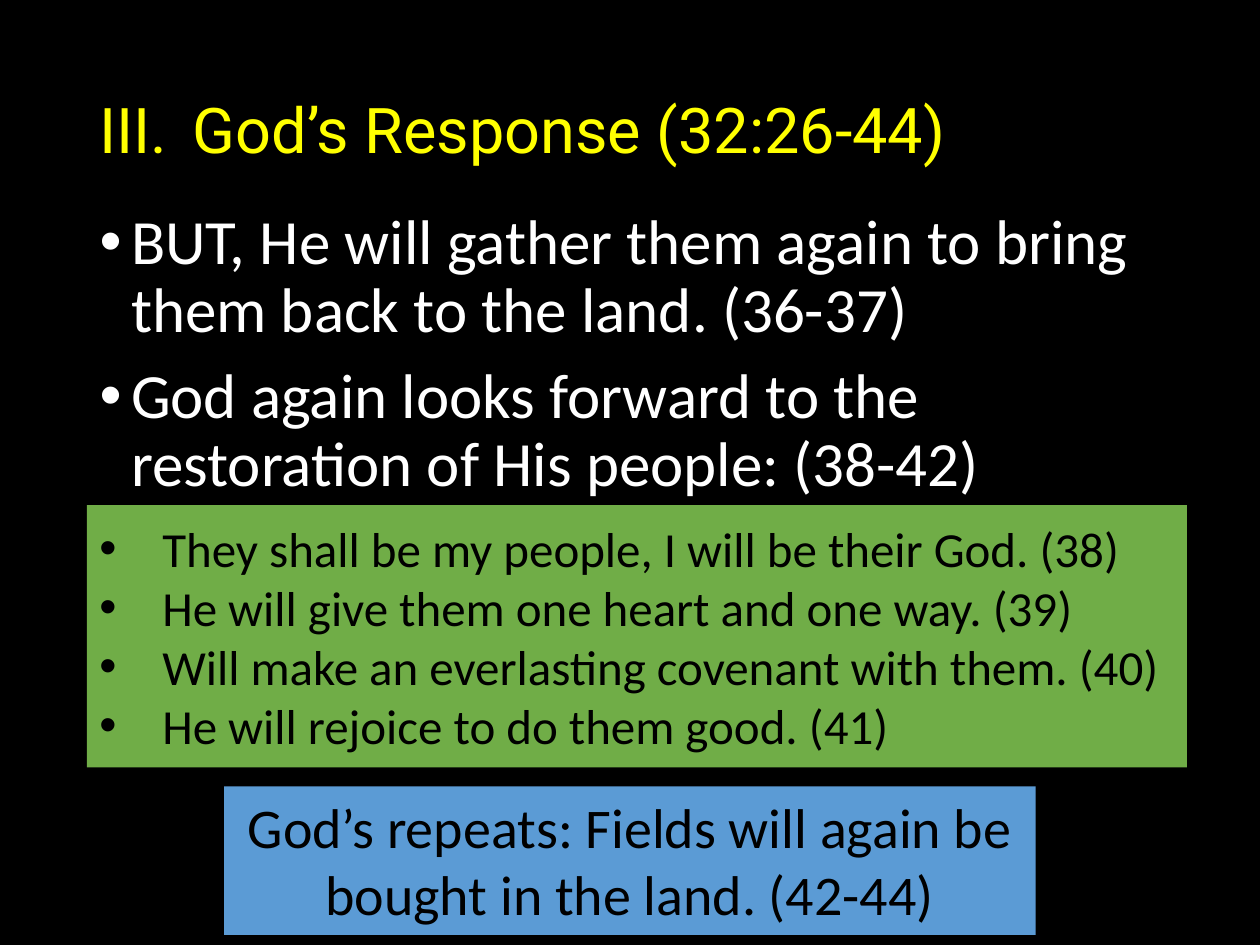
from lxml import etree
from pptx import Presentation
from pptx.dml.color import RGBColor
from pptx.enum.shapes import MSO_SHAPE
from pptx.enum.text import MSO_ANCHOR, MSO_AUTO_SIZE, PP_ALIGN
from pptx.oxml.ns import qn
from pptx.util import Inches, Pt

RECT = MSO_SHAPE.RECTANGLE
TOP, MIDDLE = MSO_ANCHOR.TOP, MSO_ANCHOR.MIDDLE
LEFT, CENTER = PP_ALIGN.LEFT, PP_ALIGN.CENTER
NO_FIT = MSO_AUTO_SIZE.NONE

BLACK = RGBColor(0x00, 0x00, 0x00)
WHITE = RGBColor(0xFF, 0xFF, 0xFF)
YELLOW = RGBColor(0xFF, 0xFF, 0x00)
GREEN = RGBColor(0x70, 0xAD, 0x47)
BLUE = RGBColor(0x5B, 0x9B, 0xD5)

# Content
TITLE = ["God’s Response (32:26-44)"]
POINTS = [
    "BUT, He will gather them again to bring them back to the land. (36-37)",
    "God again looks forward to the restoration of His people: (38-42)",
]
PROMISES = [
    "They shall be my people, I will be their God. (38)",
    "He will give them one heart and one way. (39)",
    "Will make an everlasting covenant with them. (40)",
    "He will rejoice to do them good. (41)",
]
CONCLUSION = ["God’s repeats: Fields will again be bought in the land. (42-44)"]

# Formats
BULLET = ("a:buChar", {"char": "•"})
ROMAN_III = ("a:buAutoNum", {"type": "romanUcPeriod", "startAt": "3"})
TITLE_FONT = {"name": "Roboto", "size": Pt(36)}
POINT_FONT = {"name": "Calibri", "size": Pt(36)}
PROMISE_FONT = {"name": "Calibri", "size": Pt(28)}
CONCLUSION_FONT = {"name": "Calibri", "size": Pt(32)}
PLAIN = {"alignment": LEFT, "space_before": Pt(0)}
SPACED = {"alignment": LEFT, "space_before": Pt(10), "line_spacing": 0.9}
CENTERED = {"alignment": CENTER}


def place(sp, left, top, width, height):
    sp.left, sp.top = Inches(left), Inches(top)
    sp.width, sp.height = Inches(width), Inches(height)


def set_marker(p, marker, margin, hanging):
    tag, attrs = marker
    pPr = p._p.get_or_add_pPr()
    pPr.set("marL", str(Inches(margin)))
    pPr.set("indent", str(-Inches(hanging)))
    if tag == "a:buChar":
        etree.SubElement(pPr, qn("a:buFont"), {"typeface": "Arial"})
    etree.SubElement(pPr, qn(tag), attrs)


def write(sp, lines, font, color, para, anchor, marker=None):
    tf = sp.text_frame
    tf.word_wrap, tf.auto_size, tf.vertical_anchor = True, NO_FIT, anchor
    for i, line in enumerate(lines):
        p = tf.add_paragraph() if i else tf.paragraphs[0]
        for name, value in para.items():
            setattr(p, name, value)
        if marker:
            set_marker(p, *marker)
        r = p.add_run()
        r.text = line
        for name, value in font.items():
            setattr(r.font, name, value)
        r.font.color.rgb = color


def add_box(s, fill, *box):
    sp = s.shapes.add_shape(RECT, *(Inches(v) for v in box))
    sp.shadow.inherit = False
    sp.fill.solid()
    sp.fill.fore_color.rgb = fill
    sp.line.fill.background()
    return sp


# Slide
prs = Presentation()
prs.slide_width, prs.slide_height = Inches(10), Inches(7.5)
s = prs.slides.add_slide(prs.slide_layouts[1])
s.background.fill.solid()
s.background.fill.fore_color.rgb = BLACK

# Title and main points
title, body = s.shapes.title, s.placeholders[1]
place(title, 0.69, 0.41, 8.62, 1.21)
write(title, TITLE, TITLE_FONT, YELLOW, PLAIN, MIDDLE, (ROMAN_III, 0.74, 0.94))
place(body, 0.69, 1.62, 8.62, 5.55)
write(body, POINTS, POINT_FONT, WHITE, SPACED, TOP, (BULLET, 0.25, 0.25))

# Promises and conclusion boxes
promises = add_box(s, GREEN, 0.69, 4.01, 8.73, 2.08)
write(promises, PROMISES, PROMISE_FONT, BLACK, PLAIN, MIDDLE, (BULLET, 0.5, 0.5))
conclusion = add_box(s, BLUE, 1.78, 6.24, 6.44, 1.18)
write(conclusion, CONCLUSION, CONCLUSION_FONT, BLACK, CENTERED, TOP)

prs.save("out.pptx")
